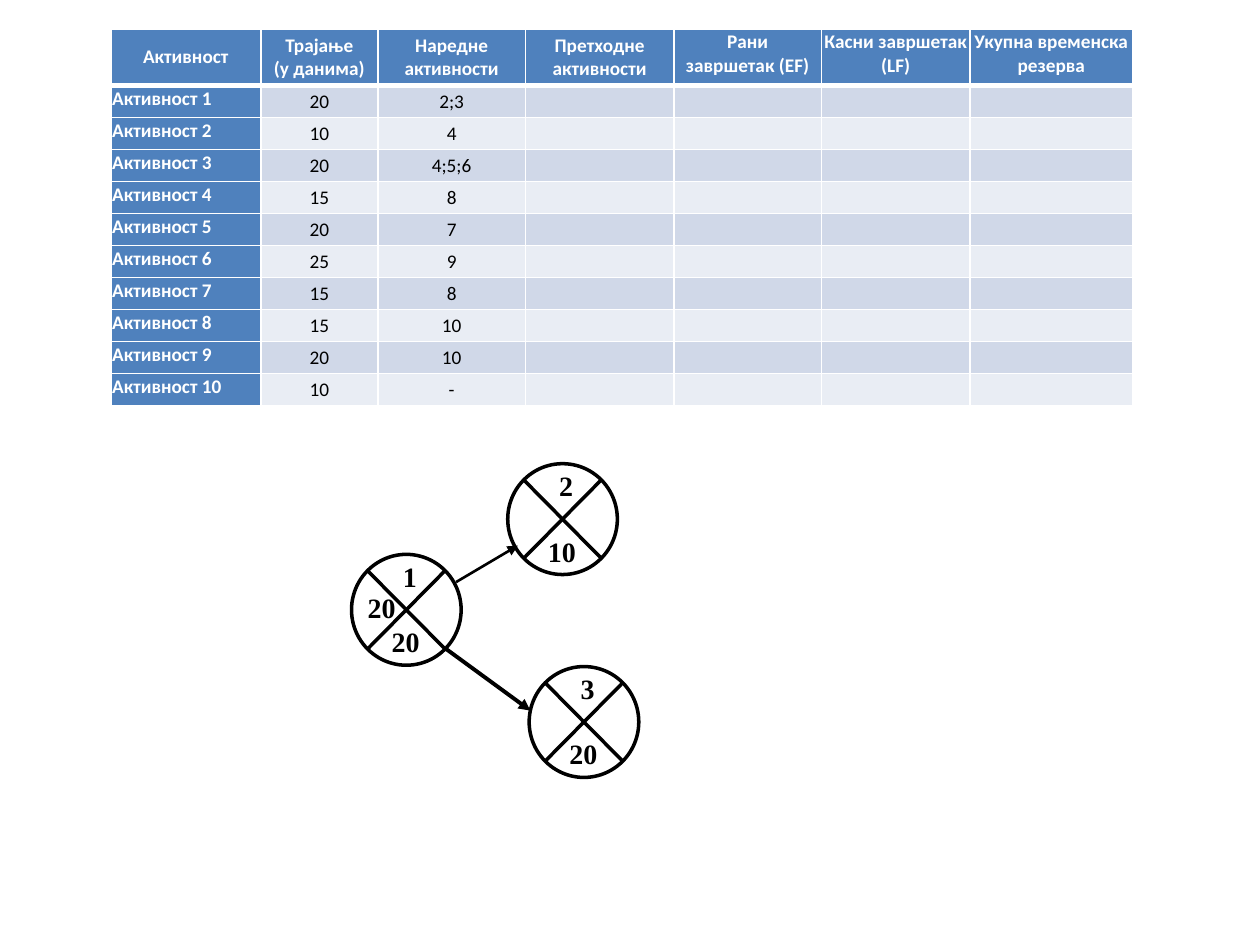
from dataclasses import dataclass
from typing import Optional

from lxml.etree import SubElement
from pptx import Presentation
from pptx.dml.color import RGBColor
from pptx.enum.shapes import MSO_CONNECTOR, MSO_SHAPE
from pptx.enum.text import MSO_ANCHOR, PP_ALIGN
from pptx.oxml.ns import qn
from pptx.util import Inches, Pt

WHITE = RGBColor(0xFF, 0xFF, 0xFF)
BLACK = RGBColor(0, 0, 0)
BLUE = RGBColor(0x4F, 0x81, 0xBD)
DARK = RGBColor(0xD0, 0xD8, 0xE8)
LIGHT = RGBColor(0xE9, 0xED, 0xF4)

WIDTHS = [1.19, 0.93, 1.17, 1.18, 1.17, 1.18, 1.29]
HEIGHT = 2.99
HEAD = 0.45
HEADERS = [
    "Активност", "Трајање\n(у данима)", "Наредне активности",
    "Претходне активности", "Рани\nзавршетак (ЕF)",
    "Касни завршетак (LF)", "Укупна временска резерва",
]


@dataclass
class Task:
    days: str
    next: str


@dataclass
class Node:
    left: float
    top: float
    name: str
    days: str
    early: Optional[str] = None


@dataclass
class Arrow:
    start: tuple[float, float]
    end: tuple[float, float]
    width: float


TASKS = [
    Task("20", "2;3"), Task("10", "4"), Task("20", "4;5;6"),
    Task("15", "8"), Task("20", "7"), Task("25", "9"),
    Task("15", "8"), Task("15", "10"), Task("20", "10"),
    Task("10", "-"),
]
NODES = [
    Node(2.79, 4.4, "1", "20", "20"),
    Node(4.03, 3.68, "2", "10"),
    Node(4.2, 5.29, "3", "20"),
]
ARROWS = [
    Arrow((3.62, 4.62), (4.11, 4.33), 1.5),
    Arrow((3.54, 5.15), (4.21, 5.64), 2.25),
]


def write(frame, text: str, *, size: float, font: str, color: RGBColor,
          bold: bool = False, align=PP_ALIGN.LEFT) -> None:
    for index, line in enumerate(text.split("\n")):
        para = frame.paragraphs[0] if index == 0 else frame.add_paragraph()
        para.alignment = align
        if not line:
            SubElement(para._p, qn("a:endParaRPr"), sz=str(int(size * 100)))
            continue
        run = para.add_run()
        run.text = line
        run.font.size = Pt(size)
        run.font.name = font
        run.font.bold = bold
        run.font.color.rgb = color


def border(cell, bottom: float) -> None:
    props = cell._tc.get_or_add_tcPr()
    for side, width in (("L", 1), ("R", 1), ("T", 1), ("B", bottom)):
        line = SubElement(props, qn(f"a:ln{side}"), w=str(Pt(width)))
        fill = SubElement(line, qn("a:solidFill"))
        SubElement(fill, qn("a:srgbClr"), val=str(WHITE))


def draw_cell(cell, text: str, row: int, col: int) -> None:
    head = row == 0
    label = head or col == 0
    border(cell, 3 if head else 1)
    cell.fill.solid()
    cell.fill.fore_color.rgb = BLUE if label else DARK if row % 2 else LIGHT
    cell.margin_left = cell.margin_right = Inches(0.01)
    cell.margin_top = cell.margin_bottom = Inches(0.01)
    middle = col < 4 if head else col > 0
    cell.vertical_anchor = MSO_ANCHOR.MIDDLE if middle else MSO_ANCHOR.TOP
    write(cell.text_frame, text, size=11, font="Calibri", bold=label,
          color=WHITE if label else BLACK,
          align=PP_ALIGN.CENTER if head or col else PP_ALIGN.LEFT)


def draw_table(slide) -> None:
    blank = [""] * (len(HEADERS) - 3)
    rows = [HEADERS] + [
        [f"Активност {number}", task.days, task.next, *blank]
        for number, task in enumerate(TASKS, 1)
    ]
    table = slide.shapes.add_table(
        len(rows), len(WIDTHS), Inches(0.88), Inches(0.23),
        Inches(sum(WIDTHS)), Inches(HEIGHT)).table
    for col, width in enumerate(WIDTHS):
        table.columns[col].width = Inches(width)
    for row, texts in enumerate(rows):
        height = (HEIGHT - HEAD) / len(TASKS) if row else HEAD
        table.rows[row].height = Inches(height)
        for col, text in enumerate(texts):
            draw_cell(table.cell(row, col), text, row, col)


def draw_node(slide, node: Node) -> None:
    group = slide.shapes.add_group_shape()
    ring = group.shapes.add_shape(
        MSO_SHAPE.FLOWCHART_SUMMING_JUNCTION, Inches(node.left),
        Inches(node.top), Inches(0.87), Inches(0.88))
    ring.shadow.inherit = False
    ring.fill.background()
    ring.line.color.rgb = BLACK
    ring.line.width = Pt(2)
    labels = [(node.name, 0.31, -0.01, 0.27), (node.days, 0.22, 0.51, 0.52)]
    if node.early:
        labels.append((node.early, 0.03, 0.24, 0.52))
    for text, left, top, width in labels:
        box = group.shapes.add_textbox(
            Inches(node.left + left), Inches(node.top + top),
            Inches(width), Inches(0.37))
        box.text_frame.word_wrap = True
        write(box.text_frame, text, size=16, font="Times New Roman",
              color=BLACK, bold=True)


def draw_arrow(slide, arrow: Arrow) -> None:
    points = [Inches(value) for value in (*arrow.start, *arrow.end)]
    line = slide.shapes.add_connector(MSO_CONNECTOR.STRAIGHT, *points)
    line.line.color.rgb = BLACK
    line.line.width = Pt(arrow.width)
    SubElement(line.line._get_or_add_ln(), qn("a:tailEnd"), type="triangle")
    SubElement(line._element.spPr, qn("a:effectLst"))


def main() -> None:
    deck = Presentation()
    deck.slide_width = Inches(10)
    deck.slide_height = Inches(7.5)
    slide = deck.slides.add_slide(deck.slide_layouts[6])
    draw_table(slide)
    for node in NODES:
        draw_node(slide, node)
    for arrow in ARROWS:
        draw_arrow(slide, arrow)
    deck.save("out.pptx")


if __name__ == "__main__":
    main()
